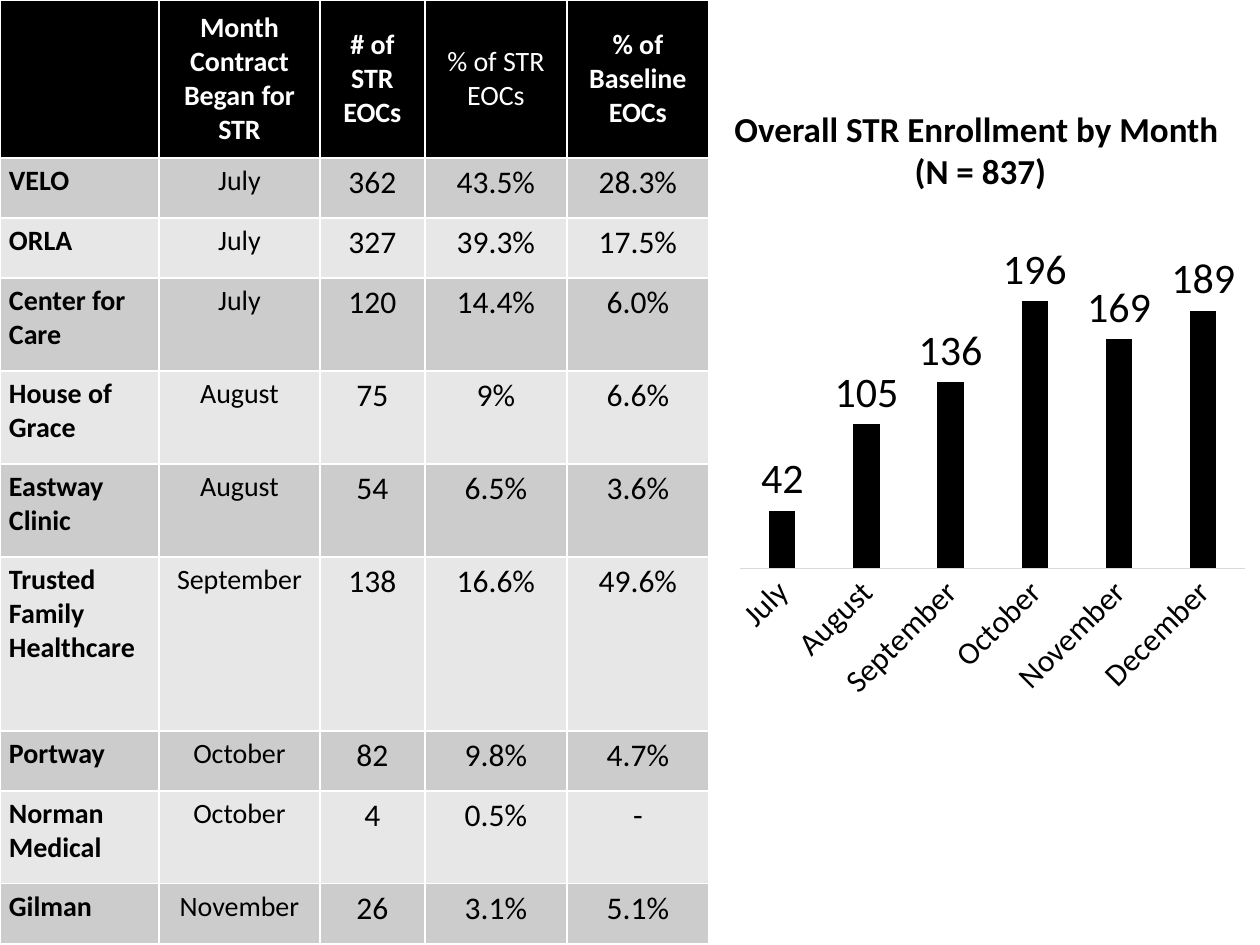
from lxml import etree
from pptx import Presentation, util as u
from pptx.chart.data import CategoryChartData
from pptx.dml.color import RGBColor
from pptx.enum import chart as ch, text
from pptx.oxml.ns import qn

BLACK = RGBColor(0x00, 0x00, 0x00)
WHITE = RGBColor(0xFF, 0xFF, 0xFF)
DARK_BAND = RGBColor(0xCC, 0xCC, 0xCC)
LIGHT_BAND = RGBColor(0xE7, 0xE7, 0xE7)
AXIS_GREY = RGBColor(0xD9, 0xD9, 0xD9)
FONT = "Calibri"

HEADER = ["", "Month Contract Began for STR", "# of STR\nEOCs",
          "% of STR EOCs", "% of Baseline EOCs"]
ROWS = [
    ["VELO", "July", "362", "43.5%", "28.3%"],
    ["ORLA", "July", "327", "39.3%", "17.5%"],
    ["Center for Care", "July", "120", "14.4%", "6.0%"],
    ["House of Grace", "August", "75", "9%", "6.6%"],
    ["Eastway Clinic", "August", "54", "6.5%", "3.6%"],
    ["Trusted Family Healthcare", "September", "138", "16.6%", "49.6%"],
    ["Portway", "October", "82", "9.8%", "4.7%"],
    ["Norman Medical", "October", "4", "0.5%", "-"],
    ["Gilman", "November", "26", "3.1%", "5.1%"],
]
COL_WIDTHS = [159, 161, 105, 142, 142]
ROW_HEIGHTS = [158, 60, 60, 93, 93, 93, 174, 60, 93, 60]

MONTHS = ["July", "August", "September", "October", "November", "December"]
ENROLLED = [42, 105, 136, 195, 167, 188]
LABEL_TEXTS = {3: "196", 4: "169", 5: "189"}


def px(n):
    return u.Inches(n / 126)


def set_font(font, size, color=BLACK, bold=False):
    for name, value in dict(name=FONT, size=u.Pt(size), bold=bold).items():
        setattr(font, name, value)
    font.color.rgb = color


def write(tf, content, align, **fmt):
    """Fill a text frame, one paragraph for each line."""
    tf.text = content
    for p in tf.paragraphs:
        p.alignment = align
        for r in p.runs:
            set_font(r.font, **fmt)


def set_borders(cell):
    tcPr = cell._tc.get_or_add_tcPr()
    for side in "LRTB":
        ln = etree.SubElement(tcPr, qn("a:ln" + side), w=str(u.Pt(1)))
        fill = etree.SubElement(ln, qn("a:solidFill"))
        etree.SubElement(fill, qn("a:srgbClr"), val=str(WHITE))


def format_cell(cell, content, row, col):
    header = row == 0
    set_borders(cell)
    cell.fill.solid()
    cell.fill.fore_color.rgb = (BLACK if header else
                                DARK_BAND if row % 2 else LIGHT_BAND)
    cell.margin_left = cell.margin_right = px(9)
    cell.margin_top = cell.margin_bottom = px(6)
    cell.vertical_anchor = text.MSO_ANCHOR.MIDDLE if header else text.MSO_ANCHOR.TOP
    write(cell.text_frame, content,
          text.PP_ALIGN.CENTER if header or col else text.PP_ALIGN.LEFT,
          size=16 if header or col < 2 else 18,
          color=WHITE if header else BLACK,
          bold=col != 3 if header else col == 0)


def add_provider_table(s, x, y, w, h):
    rows = [HEADER] + ROWS
    table = s.shapes.add_table(len(rows), len(HEADER),
                               px(x), px(y), px(w), px(h)).table
    for column, width in zip(table.columns, COL_WIDTHS):
        column.width = px(width)
    for i, (row, height) in enumerate(zip(rows, ROW_HEIGHTS)):
        table.rows[i].height = px(height)
        for j, content in enumerate(row):
            format_cell(table.cell(i, j), content, i, j)


def add_enrollment_chart(s, x, y, w, h):
    data = CategoryChartData()
    data.categories = MONTHS
    data.add_series("Series 1", ENROLLED)
    chart = s.shapes.add_chart(ch.XL_CHART_TYPE.COLUMN_CLUSTERED,
                               px(x), px(y), px(w), px(h), data).chart
    chart.has_legend = chart.has_title = False
    set_font(chart.font, 12)

    # Columns
    plot = chart.plots[0]
    for name, value in dict(gap_width=219, overlap=-27,
                            vary_by_categories=False).items():
        setattr(plot, name, value)
    series = plot.series[0]
    series.format.fill.solid()
    series.format.fill.fore_color.rgb = BLACK

    # Value labels, some with their own wording
    labels = series.data_labels
    labels.show_value = True
    labels.position = ch.XL_LABEL_POSITION.OUTSIDE_END
    set_font(labels.font, 24)
    for i, content in LABEL_TEXTS.items():
        label = series.points[i].data_label
        write(label.text_frame, content, text.PP_ALIGN.CENTER, size=24)
        label.position = ch.XL_LABEL_POSITION.OUTSIDE_END

    # Axes
    value_axis = chart.value_axis
    for name, value in dict(visible=False, has_major_gridlines=False,
                            minimum_scale=0, maximum_scale=250).items():
        setattr(value_axis, name, value)
    months = chart.category_axis
    months.major_tick_mark = ch.XL_TICK_MARK.NONE
    months.format.line.color.rgb = AXIS_GREY
    months.format.line.width = u.Pt(0.75)
    set_font(months.tick_labels.font, 18)
    months._element.find(qn("c:txPr")).find(qn("a:bodyPr")).set("rot", "-2700000")


def place_title(s, x, y, w, h):
    title = s.shapes.title
    for name, value in dict(left=x, top=y, width=w, height=h).items():
        setattr(title, name, px(value))
    tf = title.text_frame
    write(tf, "Overall STR Enrollment by Month\n (N = 837)",
          text.PP_ALIGN.CENTER, size=20, bold=True)
    for name, value in dict(word_wrap=False, auto_size=text.MSO_AUTO_SIZE.NONE,
                            vertical_anchor=text.MSO_ANCHOR.TOP).items():
        setattr(tf, name, value)


def main():
    prs = Presentation()
    prs.slide_width, prs.slide_height = px(1260), px(945)
    s = prs.slides.add_slide(prs.slide_layouts[5])
    add_provider_table(s, 0, 0, sum(COL_WIDTHS), sum(ROW_HEIGHTS))
    add_enrollment_chart(s, 724, 216, 532, 494)
    place_title(s, 720, 101, 513, 97)
    prs.save("out.pptx")


if __name__ == "__main__":
    main()
